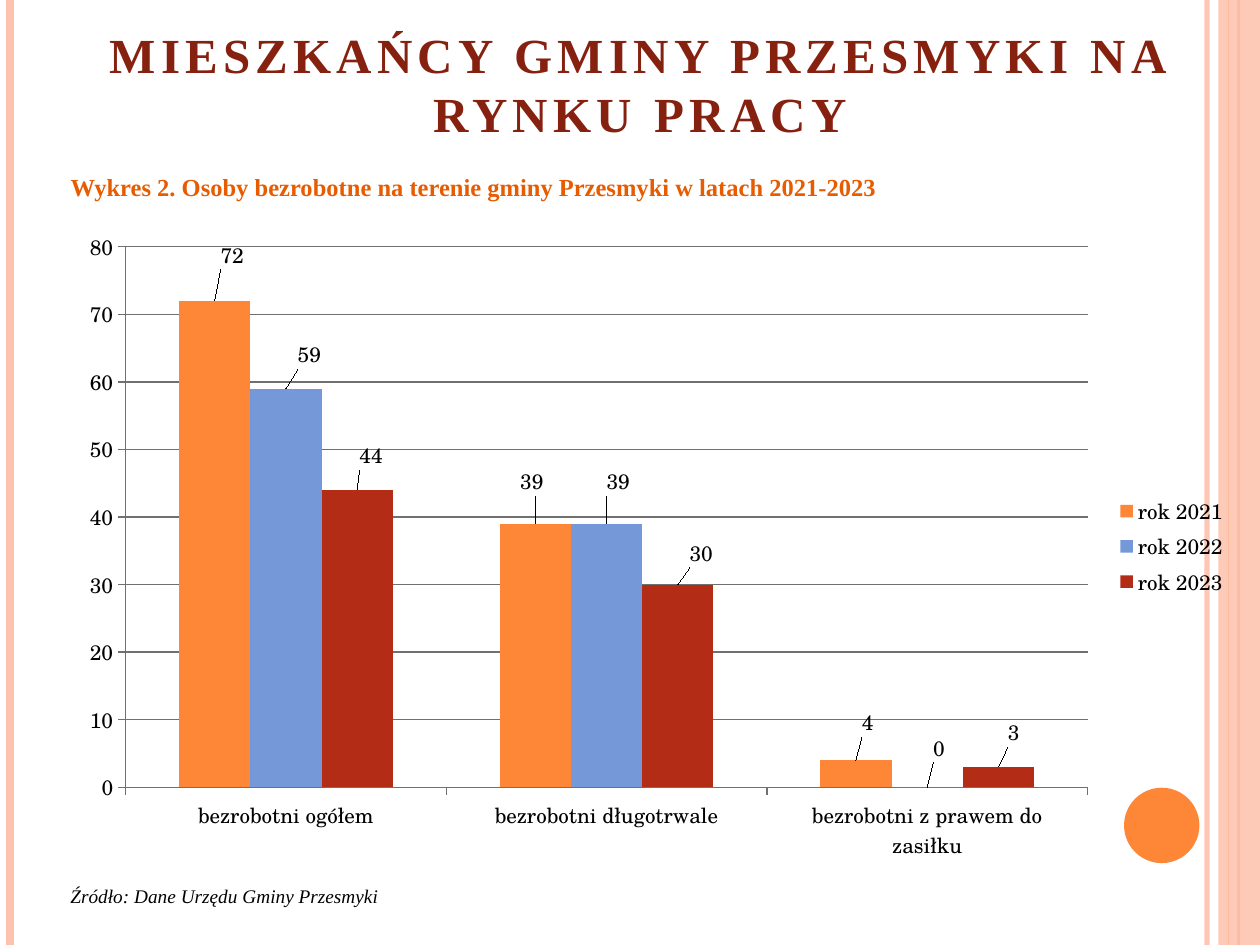
from dataclasses import dataclass
from lxml.etree import SubElement
from pptx import Presentation
from pptx.chart.data import CategoryChartData
from pptx.dml.color import RGBColor as Rgb
from pptx.enum.chart import XL_CHART_TYPE as Kind
from pptx.enum.chart import XL_LABEL_POSITION as Spot
from pptx.enum.chart import XL_LEGEND_POSITION as Side
from pptx.enum.chart import XL_TICK_MARK as Tick
from pptx.enum.shapes import MSO_CONNECTOR as Link
from pptx.enum.shapes import MSO_SHAPE as Form
from pptx.enum.text import MSO_ANCHOR as Anchor
from pptx.enum.text import PP_ALIGN as Align
from pptx.oxml import parse_xml
from pptx.oxml.ns import nsdecls, qn
from pptx.util import Cm, Pt


@dataclass(frozen=True)
class Theme:
    serif: str = "Times New Roman"
    school: str = "TeX Gyre Schola"
    peach: str = "FEC3AE"
    orange: str = "FE8637"
    maroon: str = "862110"
    rust: str = "E75C01"
    black: str = "000000"
    gray: str = "707070"
    head: int = 28
    sub: int = 14
    chart: int = 12
    note: int = 11


T = Theme()
W, H = 25.4, 19.05

TITLE = "MIESZKAŃCY GMINY PRZESMYKI NA RYNKU PRACY"
SUB = "Wykres 2. Osoby bezrobotne na terenie gminy Przesmyki w latach 2021-2023"
NOTE = "Źródło: Dane Urzędu Gminy Przesmyki"

# x in cm, colour, width in points, opacity in percent
LINES = [
    (24.33, T.peach, 3, 93),
    (0.21, T.peach, 4.5, 100),
    (24.97, T.orange, 1.5, 100),
    (24.77, T.orange, 0.75, 100),
]
CATS = ["bezrobotni ogółem", "bezrobotni długotrwale",
        "bezrobotni z prawem do zasiłku"]
# name, colour, values, label shifts as percent of chart width and height
SERIES = [
    ("rok 2021", T.orange, (72, 39, 4), ((1.5, -4), (-0.3, -3.5), (1, -2.8))),
    ("rok 2022", "7598D9", (59, 39, 0), ((2, -2.2), (1, -3.5), (1, -3))),
    ("rok 2023", "B32C16", (44, 30, 3), ((1.2, -2.3), (2, -1.8), (1.3, -2.3))),
]
PLOT = {"x": 0.05, "y": 0.04, "w": 0.82, "h": 0.83}


def box(x, y, w, h):
    return Cm(x), Cm(y), Cm(w), Cm(h)


def place(shape, x, y, w, h):
    shape.left, shape.top, shape.width, shape.height = box(x, y, w, h)


def style(font, size, color, name=T.serif, bold=False, italic=False):
    font.name, font.size = name, Pt(size)
    font.bold, font.italic = bold, italic
    font.color.rgb = Rgb.from_string(color)


def fade(shape, alpha):
    """Set the opacity, in percent, of the shape's first colour."""
    color = shape._element.spPr.find(".//" + qn("a:srgbClr"))
    SubElement(color, qn("a:alpha"), val=str(alpha * 1000))


def stripe(shapes, x, color, width, alpha):
    line = shapes.add_connector(Link.STRAIGHT, Cm(x), 0, Cm(x), Cm(H))
    line.line.color.rgb = Rgb.from_string(color)
    line.line.width = Pt(width)
    fade(line, alpha)
    SubElement(line._element.spPr, qn("a:effectLst"))


def solid(shapes, form, color, *spot):
    shape = shapes.add_shape(form, *box(*spot))
    shape.shadow.inherit = False
    shape.fill.solid()
    shape.fill.fore_color.rgb = Rgb.from_string(color)
    shape.line.fill.background()
    return shape


def layout(parts, inner=False):
    """Make a manual chart layout from a dict of x, y, w and h."""
    tags = '<c:layoutTarget val="inner"/>' if inner else ""
    if inner:
        tags += '<c:xMode val="edge"/><c:yMode val="edge"/>'
    tags += "".join(f'<c:{k} val="{v}"/>' for k, v in parts.items())
    return parse_xml(f'<c:layout {nsdecls("c")}><c:manualLayout>{tags}'
                     "</c:manualLayout></c:layout>")


def add_bars(shapes):
    data = CategoryChartData()
    data.categories = CATS
    for name, _, vals, _ in SERIES:
        data.add_series(name, vals)
    chart = shapes.add_chart(Kind.COLUMN_CLUSTERED,
                             *box(1.35, 4.45, 23.65, 13.13), data).chart
    style(chart.font, T.chart, T.black, T.school)
    chart.has_title = False
    chart.has_legend = True
    chart.legend.position = Side.RIGHT
    chart.legend.include_in_layout = False

    gray = Rgb.from_string(T.gray)
    val = chart.value_axis
    val.minimum_scale, val.maximum_scale, val.major_unit = 0, 80, 10
    val.has_major_gridlines = True
    for axis in (val, chart.category_axis):
        axis.major_tick_mark = Tick.OUTSIDE
    for part in (val, chart.category_axis, val.major_gridlines):
        part.format.line.color.rgb = gray
        part.format.line.width = Pt(0.75)

    plot = chart.plots[0]
    plot.gap_width, plot.overlap = 150, 0
    plot.vary_by_categories = False
    for bars, (_, color, _, shifts) in zip(plot.series, SERIES):
        bars.format.fill.solid()
        bars.format.fill.fore_color.rgb = Rgb.from_string(color)
        for i, (dx, dy) in enumerate(shifts):
            label = bars.points[i].data_label
            style(label.font, T.chart, T.black, T.school)
            label.position = Spot.OUTSIDE_END
            node = bars._element.xpath(f"c:dLbls/c:dLbl[c:idx/@val={i}]")[0]
            shift = {"x": round(dx / 100, 3), "y": round(dy / 100, 3)}
            node.insert(1, layout(shift))

    area = chart._chartSpace.chart.plotArea
    for old in area.findall(qn("c:layout")):
        area.remove(old)
    area.insert(0, layout(PLOT, inner=True))


def main():
    deck = Presentation()
    deck.slide_width, deck.slide_height = Cm(W), Cm(H)
    slide = deck.slides.add_slide(deck.slide_layouts[1])
    shapes = slide.shapes
    title, body = slide.placeholders

    for row in LINES:
        stripe(shapes, *row)
    fade(solid(shapes, Form.RECTANGLE, T.peach, 24.56, 0, 0.84, H), 87)
    solid(shapes, Form.OVAL, T.orange, 22.66, 15.88, 1.52, 1.52)
    for holder in (title, body):
        shapes._spTree.append(holder._element)

    place(title, 0.84, 0.66, 24.13, 2.34)
    title.text_frame.text = TITLE
    title.text_frame.vertical_anchor = Anchor.BOTTOM
    para = title.text_frame.paragraphs[0]
    para.alignment = Align.CENTER
    style(para.font, T.head, T.maroon, bold=True)
    para.runs[0]._r.get_or_add_rPr().set("spc", "300")

    place(body, 1.17, 3.35, 23.55, 1.4)
    body.text_frame.text = SUB
    para = body.text_frame.paragraphs[0]
    para.space_before = Pt(6)
    style(para.font, T.sub, T.rust, bold=True)
    props = para._p.get_or_add_pPr()
    props.set("marL", str(Cm(0.76)))
    props.set("indent", str(-Cm(0.76)))
    props.insert_element_before(parse_xml(f'<a:buNone {nsdecls("a")}/>'),
                                "a:tabLst", "a:defRPr", "a:extLst")

    add_bars(shapes)

    note = shapes.add_textbox(*box(1.17, 17.7, 6.76, 0.74)).text_frame
    note.word_wrap = False
    note.text = NOTE
    style(note.paragraphs[0].font, T.note, T.black, italic=True)
    deck.save("out.pptx")


if __name__ == "__main__":
    main()
